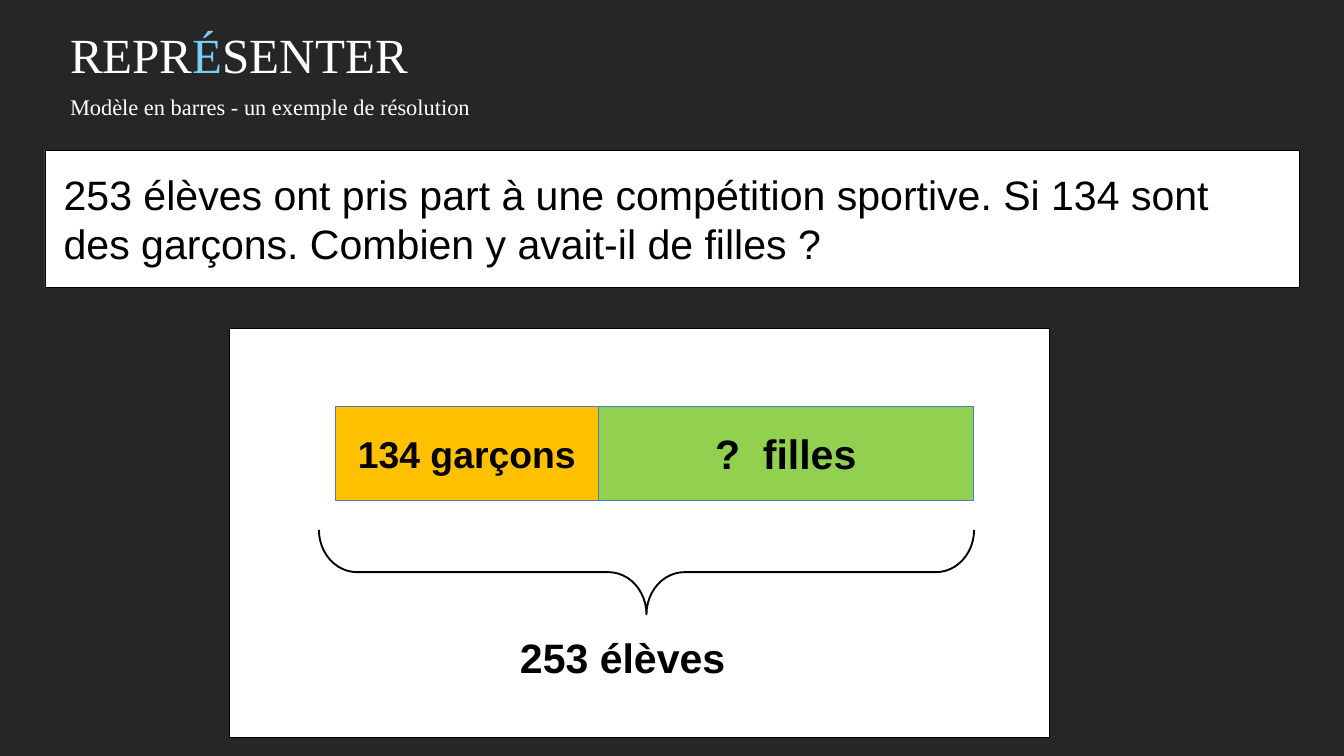
from dataclasses import dataclass

import pptx
import pptx.dml.color
import pptx.enum.shapes
import pptx.enum.text
import pptx.util

Pt = pptx.util.Pt
Align = pptx.enum.text.PP_ALIGN
Anchor = pptx.enum.text.MSO_ANCHOR
ShapeType = pptx.enum.shapes.MSO_SHAPE

COLORS = {
    "background": "262626",
    "white": "FFFFFF",
    "black": "000000",
    "accent": "7BCFF5",
    "boys": "FFC000",
    "girls": "92D050",
    "bar_line": "4B7EBC",
}


@dataclass
class Box:
    left: float
    top: float
    width: float
    height: float

    def lengths(self) -> tuple:
        return Pt(self.left), Pt(self.top), Pt(self.width), Pt(self.height)


@dataclass
class Bar:
    text: str
    width: float
    color: str
    size: float


BARS = [
    Bar("134 garçons", 281.5, "boys", 40),
    Bar("?  filles", 402.5, "girls", 44),
]
BARS_LEFT, BARS_TOP, BARS_HEIGHT = 359.3, 435.6, 100


def rgb(name: str) -> pptx.dml.color.RGBColor:
    return pptx.dml.color.RGBColor.from_string(COLORS[name])


def write_text(shape, *pieces, font="Arial", size=44, bold=False,
               align=Align.LEFT, anchor=Anchor.TOP, inset=(7.2, 3.6), spacing=1.0) -> None:
    frame = shape.text_frame
    frame.word_wrap = True
    frame.auto_size = pptx.enum.text.MSO_AUTO_SIZE.NONE
    frame.vertical_anchor = anchor
    frame.margin_left = frame.margin_right = Pt(inset[0])
    frame.margin_top = frame.margin_bottom = Pt(inset[1])
    paragraph = frame.paragraphs[0]
    paragraph.alignment = align
    paragraph.line_spacing = spacing
    paragraph.space_before = Pt(0)
    for text, color in pieces:
        run = paragraph.add_run()
        run.text = text
        run.font.name = font
        run.font.size = Pt(size)
        run.font.bold = bold
        run.font.color.rgb = rgb(color)


def place(shape, box: Box) -> None:
    shape.left, shape.top, shape.width, shape.height = box.lengths()


def draw_shape(slide, kind, box: Box, fill=None, line="black", line_width=0.75):
    shape = slide.shapes.add_shape(kind, *box.lengths())
    shape.shadow.inherit = False
    if fill:
        shape.fill.solid()
        shape.fill.fore_color.rgb = rgb(fill)
    else:
        shape.fill.background()
    shape.line.color.rgb = rgb(line)
    shape.line.width = Pt(line_width)
    return shape


def draw_heading(slide) -> None:
    title, subtitle = slide.placeholders
    place(title, Box(62, 25.2, 1296, 72))
    write_text(title, ("REPR", "white"), ("É", "accent"), ("SENTER", "white"),
               font="Times New Roman", size=52.6, anchor=Anchor.MIDDLE,
               inset=(13, 6.5), spacing=0.9)
    place(subtitle, Box(62, 92.9, 1281.6, 45.4))
    write_text(subtitle, ("Modèle en barres - un exemple de résolution", "white"),
               font="Times New Roman", size=24, inset=(13, 6.5))


def draw_problem(slide) -> None:
    problem = draw_shape(slide, ShapeType.RECTANGLE, Box(48.2, 161.3, 1343.5, 146.9), "white")
    write_text(problem, ("253 élèves ont pris part à une compétition sportive. "
                         "Si 134 sont des garçons. Combien y avait-il de filles ?", "black"),
               inset=(20, 20))


def draw_bar_model(slide) -> None:
    draw_shape(slide, ShapeType.RECTANGLE, Box(245.5, 352, 878.4, 437.8), "white")

    left = BARS_LEFT
    for bar in BARS:
        shape = draw_shape(slide, ShapeType.RECTANGLE,
                           Box(left, BARS_TOP, bar.width, BARS_HEIGHT), bar.color, "bar_line")
        write_text(shape, (bar.text, "black"), size=bar.size, bold=True,
                   align=Align.CENTER, anchor=Anchor.MIDDLE)
        left += bar.width

    brace = draw_shape(slide, ShapeType.LEFT_BRACE, Box(647.3, 262, 90.7, 702), line_width=2)
    brace.rotation = 270
    brace.adjustments[0] = 0.45
    brace.adjustments[1] = 0.5

    total = slide.shapes.add_textbox(*Box(550, 674.6, 285, 60.5).lengths())
    write_text(total, ("253 élèves", "black"), bold=True)


def main() -> None:
    presentation = pptx.Presentation()
    presentation.slide_width = Pt(1440)
    presentation.slide_height = Pt(810)
    slide = presentation.slides.add_slide(presentation.slide_layouts[0])
    slide.background.fill.solid()
    slide.background.fill.fore_color.rgb = rgb("background")
    draw_heading(slide)
    draw_problem(slide)
    draw_bar_model(slide)
    presentation.save("out.pptx")


if __name__ == "__main__":
    main()
